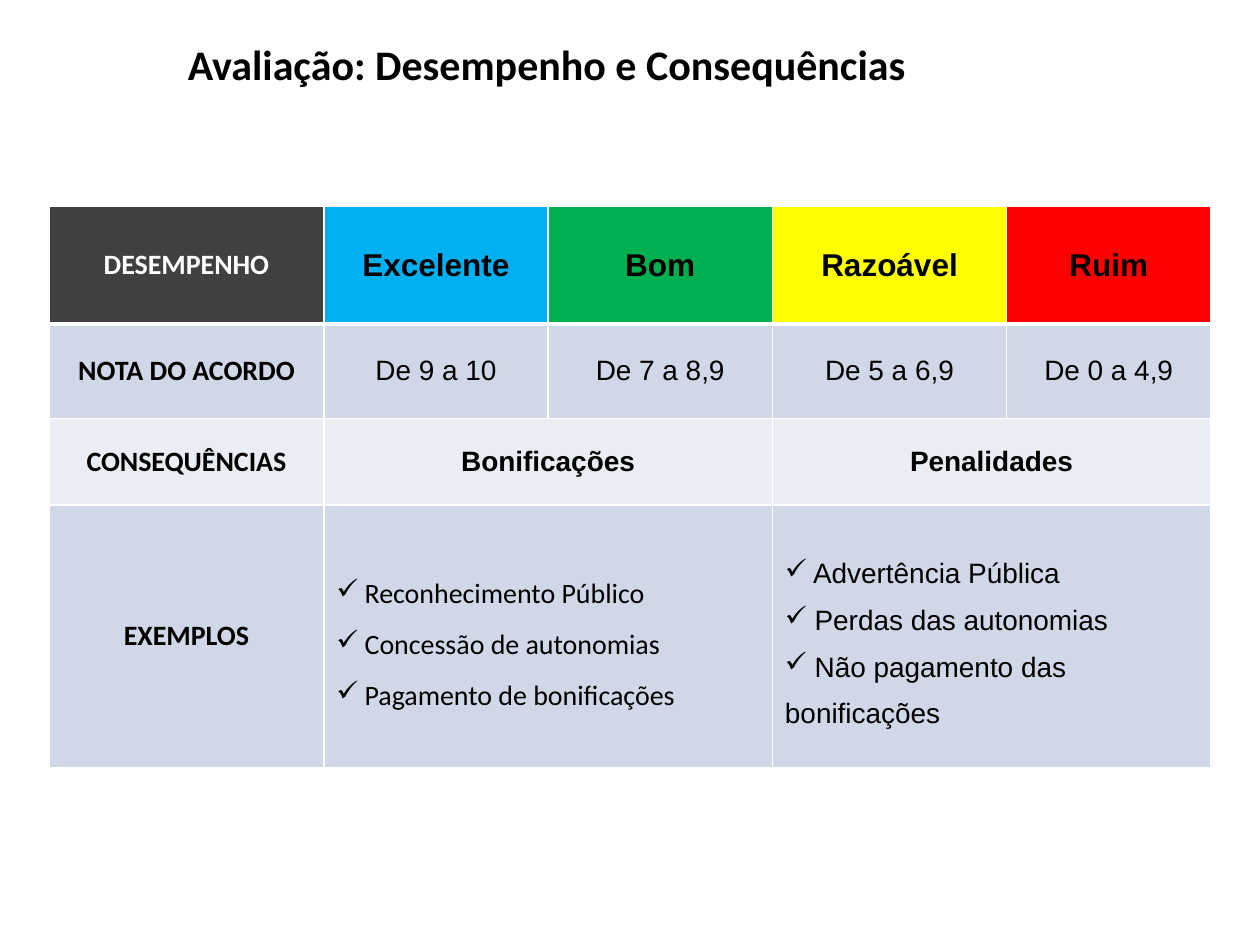
from dataclasses import dataclass

from lxml import etree
from pptx import Presentation
from pptx.dml.color import RGBColor
from pptx.enum import text as tx
from pptx.oxml import ns
from pptx.util import Inches, Pt

COLS = [2.18, 1.78, 1.78, 1.86, 1.62]
ROWS = [0.93, 0.75, 0.69, 2.08]
BLACK, WHITE = "000000", "FFFFFF"
DARK, BAND, PALE = "404040", "D0D8E8", "E9EDF4"
MID = tx.MSO_ANCHOR.MIDDLE


@dataclass
class Item:
    lines: list[str]
    fill: str
    font: str = "Arial"
    size: int = 16
    bold: bool = False
    color: str = BLACK
    span: int = 1
    list: bool = False
    inset: bool = False


def rgb(code: str) -> RGBColor:
    return RGBColor.from_string(code)


def child(node, tag: str, **attrs: str):
    return etree.SubElement(node, ns.qn(tag), **attrs)


def write(frame, lines: list[str], *, font="Calibri", size=16, bold=False,
          color=BLACK, ticks=False) -> None:
    """Fill a frame with centred lines, or with a ticked list."""
    frame.word_wrap = True
    for i, line in enumerate(lines):
        par = frame.paragraphs[0] if i == 0 else frame.add_paragraph()
        if ticks:
            par.line_spacing = 1.5
            props = par._p.get_or_add_pPr()
            props.set("marL", "0")
            props.set("indent", "0")
            child(props, "a:buChar", char="✓")
        else:
            par.alignment = tx.PP_ALIGN.CENTER
        run = par.add_run()
        run.text = line
        face = run.font
        face.name, face.size, face.bold = font, Pt(size), bold
        face.color.rgb = rgb(color)


def edge(cell, top: int, base: int) -> None:
    """Add white borders; must come before the cell's fill."""
    props = cell._tc.get_or_add_tcPr()
    for side, width in zip("LRTB", (1, 1, top, base)):
        line = child(props, f"a:ln{side}", w=str(Pt(width)))
        child(child(line, "a:solidFill"), "a:srgbClr", val=WHITE)


def label(name: str, fill: str, color: str = BLACK, inset: bool = False) -> Item:
    return Item([name], fill, "Calibri", bold=True, color=color, inset=inset)


def grade(name: str, fill: str, inset: bool = False) -> Item:
    return Item([name], fill, size=18, bold=True, inset=inset)


def put(grid, row: int, col: int, item: Item) -> None:
    for c in range(col, col + item.span):
        cell = grid.cell(row, c)
        edge(cell, 3 if row == 1 else 1, 3 if row == 0 else 1)
        cell.fill.solid()
        cell.fill.fore_color.rgb = rgb(item.fill)
    cell = grid.cell(row, col)
    if item.span > 1:
        cell.merge(grid.cell(row, col + item.span - 1))
    cell.vertical_anchor = MID
    if item.inset:
        cell.margin_left = cell.margin_right = Inches(0.07)
        cell.margin_top = cell.margin_bottom = 0
    write(cell.text_frame, item.lines, font=item.font, size=item.size,
          bold=item.bold, color=item.color, ticks=item.list)


TABLE = [
    [label("DESEMPENHO", DARK, WHITE, True),
     grade("Excelente", "00B0F0", True), grade("Bom", "00B050"),
     grade("Razoável", "FFFF00", True), grade("Ruim", "FF0000")],
    [label("NOTA DO ACORDO", BAND)]
    + [Item([mark], BAND) for mark in
       ("De 9 a 10", "De 7 a 8,9", "De 5 a 6,9", "De 0 a 4,9")],
    [label("CONSEQUÊNCIAS", PALE)]
    + [Item([name], PALE, bold=True, span=2)
       for name in ("Bonificações", "Penalidades")],
    [label("EXEMPLOS", BAND),
     Item([" Reconhecimento Público", " Concessão de autonomias",
           " Pagamento de bonificações"], BAND, "Calibri", span=2, list=True),
     Item([" Advertência Pública", " Perdas das autonomias",
           " Não pagamento das bonificações"], BAND, span=2, list=True)],
]


def main() -> None:
    deck = Presentation()
    deck.slide_width, deck.slide_height = Inches(10), Inches(7.5)
    slide = deck.slides.add_slide(deck.slide_layouts[6])

    grid = slide.shapes.add_table(
        len(ROWS), len(COLS), Inches(0.39), Inches(1.64),
        Inches(sum(COLS)), Inches(sum(ROWS))).table
    for col, width in zip(grid.columns, COLS):
        col.width = Inches(width)
    for row, height in zip(grid.rows, ROWS):
        row.height = Inches(height)
    for r, items in enumerate(TABLE):
        c = 0
        for item in items:
            put(grid, r, c, item)
            c += item.span

    title = slide.shapes.add_textbox(
        Inches(1.02), Inches(0.23), Inches(6.64), Inches(0.55)).text_frame
    title.vertical_anchor = MID
    write(title, ["Avaliação: Desempenho e Consequências"], size=24, bold=True)
    deck.save("out.pptx")


if __name__ == "__main__":
    main()
